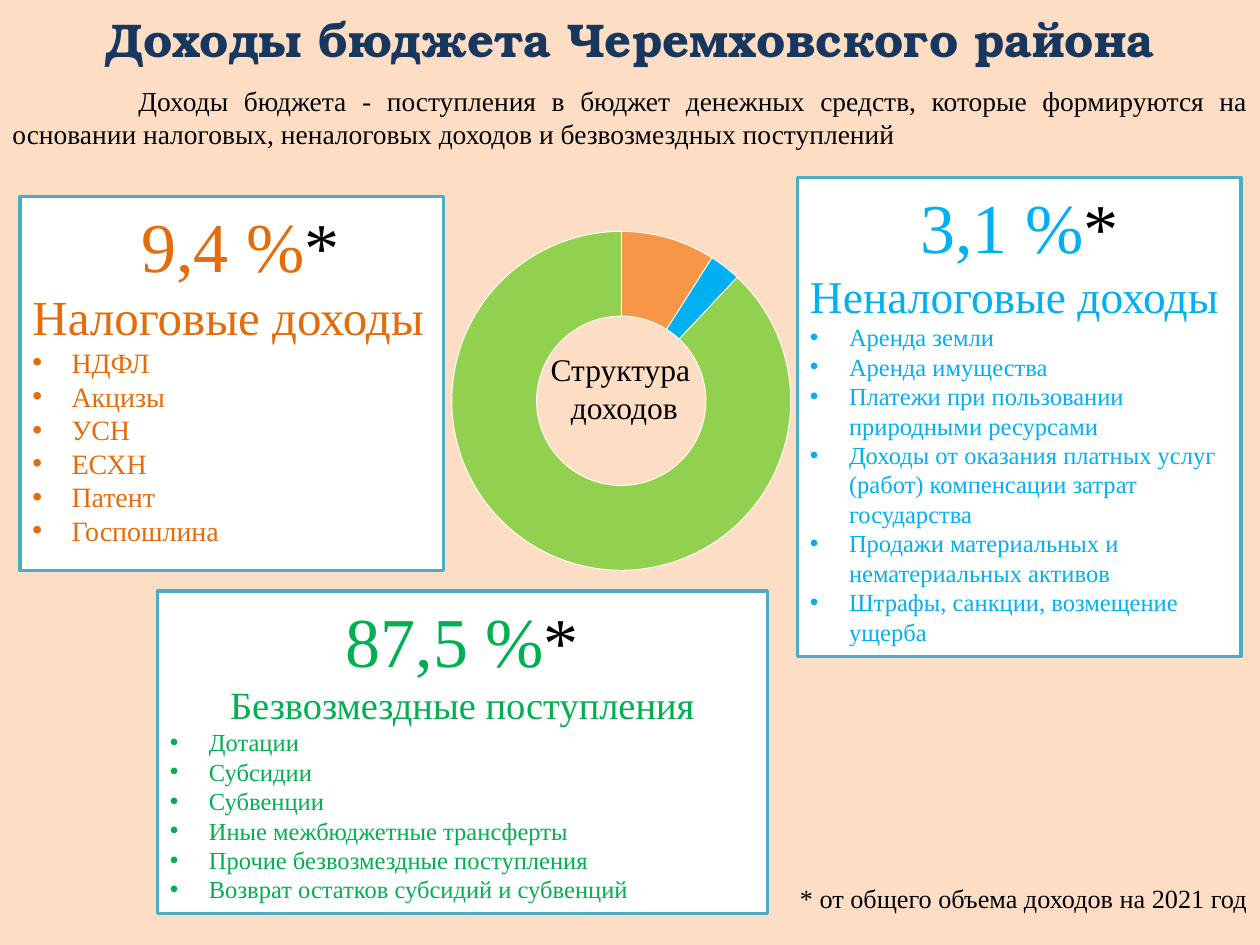
"""Build the slide on the revenue structure of the district budget."""
from dataclasses import dataclass

from lxml import etree
from pptx import Presentation
from pptx import util as u
from pptx.chart import data
from pptx.dml import color
from pptx.enum import chart as ch
from pptx.enum import shapes, text
from pptx.oxml import ns

AL = text.PP_ALIGN


@dataclass(frozen=True)
class Theme:
    back: str = "FDDEC5"
    card: str = "FFFFFF"
    edge: str = "4BACC6"
    ink: str = "000000"
    navy: str = "17375E"
    head: str = "TeX Gyre Bonum"
    body: str = "Times New Roman"
    plot: str = "Calibri"
    title: float = 27
    lead: float = 15.7
    label: float = 18
    share: float = 40
    note: float = 15


@dataclass(frozen=True)
class Box:
    left: float
    top: float
    width: float
    height: float

    def spans(self) -> tuple:
        return tuple(map(u.Inches, (self.left, self.top, self.width, self.height)))


@dataclass(frozen=True)
class Card:
    box: Box
    hue: str
    share: str
    name: str
    size: float
    align: AL
    items: tuple
    small: float


@dataclass(frozen=True)
class Slice:
    name: str
    value: float
    hue: str


T = Theme()
CARDS = (
    Card(Box(0.16, 1.56, 3.36, 2.97), "E46C0A", " 9,4 %", "Налоговые доходы", 28, AL.LEFT,
         ("НДФЛ", "Акцизы", "УСН", "ЕСХН", "Патент", "Госпошлина"), 16),
    Card(Box(6.33, 1.41, 3.52, 3.8), "00B0F0", "3,1 %", "Неналоговые доходы", 26, AL.LEFT,
         ("Аренда земли", "Аренда имущества",
          "Платежи при пользовании природными ресурсами",
          "Доходы от оказания платных услуг (работ) компенсации затрат государства",
          "Продажи материальных и нематериальных активов",
          "Штрафы, санкции, возмещение ущерба"), 14),
    Card(Box(1.25, 4.69, 4.84, 2.56), "00B050", "87,5 %", "Безвозмездные поступления", 22, AL.CENTER,
         ("Дотации", "Субсидии", "Субвенции", "Иные межбюджетные трансферты",
          "Прочие безвозмездные поступления", "Возврат остатков субсидий и субвенций"), 14),
)
SLICES = (Slice("1", 9, "F79646"), Slice("2", 3, "00B0F0"), Slice("3", 88, "92D050"))


def rgb(hue: str) -> color.RGBColor:
    return color.RGBColor.from_string(hue)


def style(font, size: float, hue: str, face: str = T.body, bold: bool = False) -> None:
    font.size, font.name, font.bold = u.Pt(size), face, bold
    font.color.rgb = rgb(hue)


def indent(para, left: float, first: float) -> None:
    props = para._p.get_or_add_pPr()
    props.set("marL", str(u.Inches(left)))
    props.set("indent", str(u.Inches(first)))


def bullet(para) -> None:
    props = para._p.get_or_add_pPr()
    etree.SubElement(props, ns.qn("a:buFont")).set("typeface", "Arial")
    etree.SubElement(props, ns.qn("a:buChar")).set("char", "•")


def write(slide, box: Box, words: str, size: float, align: AL = AL.LEFT,
          hue: str = T.ink, face: str = T.body, bold: bool = False):
    frame = slide.shapes.add_textbox(*box.spans()).text_frame
    frame.word_wrap = True
    frame.text = words
    for para in frame.paragraphs:
        para.alignment = align
        for run in para.runs:
            style(run.font, size, hue, face, bold)
    return frame


def draw_card(slide, card: Card) -> None:
    shape = slide.shapes.add_shape(shapes.MSO_SHAPE.RECTANGLE, *card.box.spans())
    shape.shadow.inherit = False
    shape.fill.solid()
    shape.fill.fore_color.rgb = rgb(T.card)
    shape.line.color.rgb = rgb(T.edge)
    shape.line.width = u.Pt(2)
    frame = shape.text_frame
    frame.word_wrap = True
    frame.vertical_anchor = text.MSO_ANCHOR.TOP
    frame.text = "\n".join((card.share, card.name, *card.items))
    top, name, *items = frame.paragraphs
    looks = [(top, T.share, AL.CENTER), (name, card.size, card.align)]
    looks += [(item, card.small, AL.LEFT) for item in items]
    for para, size, align in looks:
        para.alignment = align
        indent(para, 0.31, -0.31)
        style(para.runs[0].font, size, card.hue)
    for item in items:
        bullet(item)
    star = top.add_run()
    star.text = "*"
    style(star.font, T.share, T.ink)


def place_plot(chart, **parts: float) -> None:
    area = chart._chartSpace.find(".//" + ns.qn("c:plotArea"))
    for old in area.findall(ns.qn("c:layout")):
        area.remove(old)
    layout = etree.Element(ns.qn("c:layout"))
    manual = etree.SubElement(layout, ns.qn("c:manualLayout"))
    rules = {"layoutTarget": "inner", "xMode": "edge", "yMode": "edge", **parts}
    for tag, val in rules.items():
        etree.SubElement(manual, ns.qn("c:" + tag)).set("val", str(val))
    area.insert(0, layout)


def draw_ring(slide, box: Box) -> None:
    info = data.CategoryChartData()
    info.categories = [part.name for part in SLICES]
    info.add_series("Доходы", [part.value for part in SLICES])
    chart = slide.shapes.add_chart(ch.XL_CHART_TYPE.DOUGHNUT, *box.spans(), info).chart
    chart.has_legend = chart.has_title = False
    style(chart.font, T.label, T.ink, T.plot)
    place_plot(chart, x=0.27, y=0.06, w=0.55, h=0.82)
    plot = chart.plots[0]
    plot.vary_by_categories = True
    for i, part in enumerate(SLICES):
        look = plot.series[0].points[i].format
        look.fill.solid()
        look.fill.fore_color.rgb = rgb(part.hue)
        look.line.color.rgb = rgb(T.card)
        look.line.width = u.Pt(0.5)


def main() -> None:
    deck = Presentation()
    deck.slide_width, deck.slide_height = u.Inches(10), u.Inches(7.5)
    slide = deck.slides.add_slide(deck.slide_layouts[6])
    slide.background.fill.solid()
    slide.background.fill.fore_color.rgb = rgb(T.back)
    title = write(slide, Box(0, 0, 10, 0.62), "Доходы бюджета Черемховского района",
                  T.title, AL.CENTER, T.navy, T.head, True)
    title.vertical_anchor = text.MSO_ANCHOR.MIDDLE
    lead = write(slide, Box(0, 0.62, 10, 0.63),
                 "Доходы бюджета - поступления в бюджет денежных средств, которые формируются на "
                 "основании налоговых, неналоговых доходов и безвозмездных поступлений",
                 T.lead, AL.JUSTIFY)
    indent(lead.paragraphs[0], 0, 1)
    draw_ring(slide, Box(1.95, 1.64, 5.47, 3.28))
    write(slide, Box(3.98, 2.73, 1.95, 0.71), "Структура \nдоходов", T.label, AL.CENTER)
    for card in CARDS:
        draw_card(slide, card)
    write(slide, Box(6.25, 6.95, 3.75, 0.35), "* от общего объема доходов на 2021 год", T.note)
    deck.save("out.pptx")


if __name__ == "__main__":
    main()
